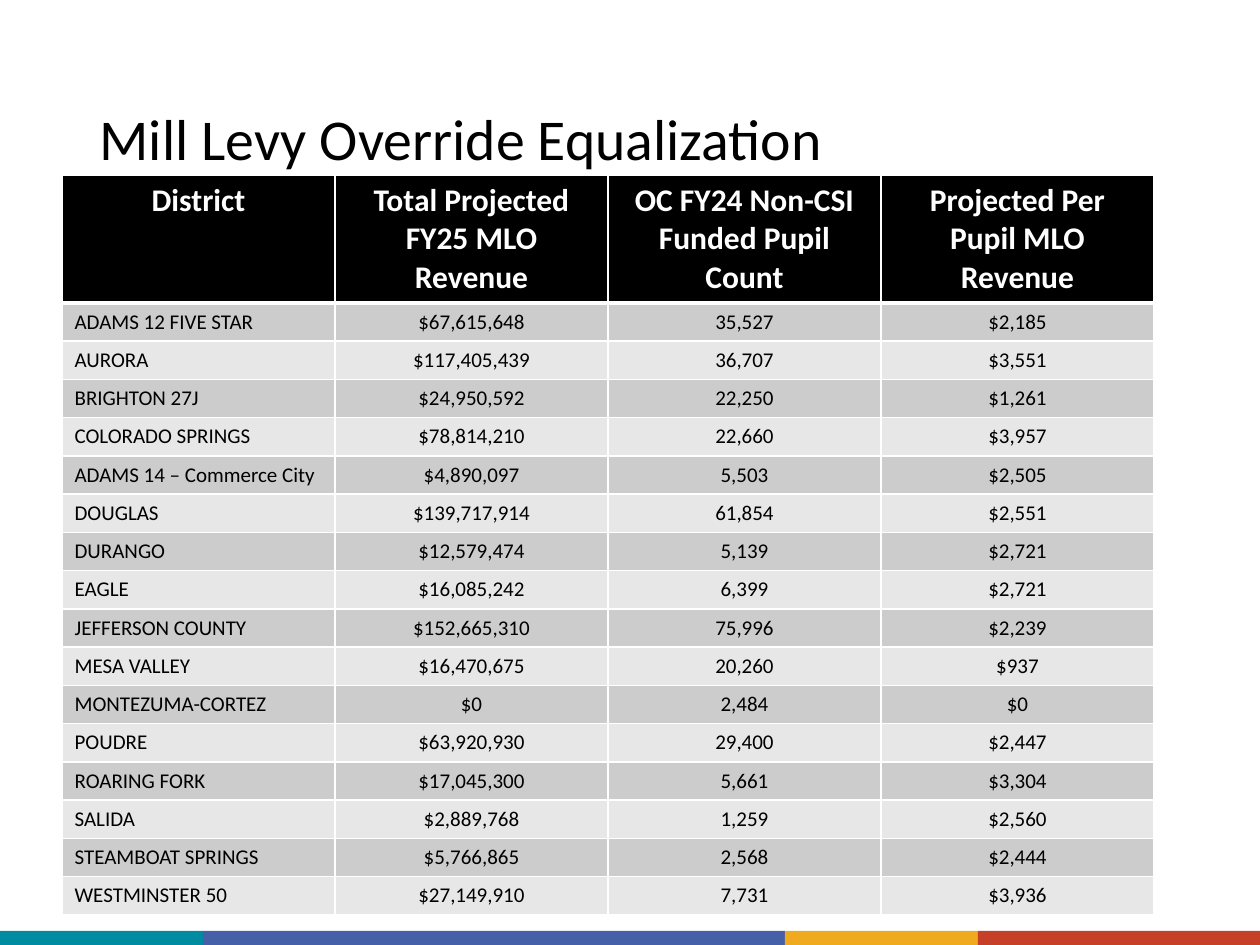
from lxml import etree
from pptx import Presentation
from pptx import util as u
from pptx.dml.color import RGBColor
from pptx.enum import shapes, text
from pptx.oxml import ns

PX = u.Inches(1) // 126
FONT = "Calibri"
BLACK = RGBColor(0x00, 0x00, 0x00)
WHITE = RGBColor(0xFF, 0xFF, 0xFF)
BAND_DARK = RGBColor(0xCC, 0xCC, 0xCC)
BAND_LIGHT = RGBColor(0xE7, 0xE7, 0xE7)
TEAL = RGBColor(0x00, 0x8C, 0xA0)
BLUE = RGBColor(0x45, 0x5F, 0xA9)
GOLD = RGBColor(0xEF, 0xAA, 0x1F)
RED = RGBColor(0xC6, 0x3F, 0x28)

TITLE = "Mill Levy Override Equalization"
HEADERS = ("District", "Total Projected FY25 MLO Revenue",
           "OC FY24 Non-CSI Funded Pupil Count", "Projected Per Pupil MLO Revenue")
DISTRICTS = [
    ("ADAMS 12 FIVE STAR", 67615648, 35527, 2185),
    ("AURORA", 117405439, 36707, 3551),
    ("BRIGHTON 27J", 24950592, 22250, 1261),
    ("COLORADO SPRINGS", 78814210, 22660, 3957),
    ("ADAMS 14 – Commerce City", 4890097, 5503, 2505),
    ("DOUGLAS", 139717914, 61854, 2551),
    ("DURANGO", 12579474, 5139, 2721),
    ("EAGLE", 16085242, 6399, 2721),
    ("JEFFERSON COUNTY", 152665310, 75996, 2239),
    ("MESA VALLEY", 16470675, 20260, 937),
    ("MONTEZUMA-CORTEZ", 0, 2484, 0),
    ("POUDRE", 63920930, 29400, 2447),
    ("ROARING FORK", 17045300, 5661, 3304),
    ("SALIDA", 2889768, 1259, 2560),
    ("STEAMBOAT SPRINGS", 5766865, 2568, 2444),
    ("WESTMINSTER 50", 27149910, 7731, 3936),
]


def emu(*lengths):
    return [n * PX for n in lengths]


def format_text(p, size, color, bold=False, align=text.PP_ALIGN.LEFT):
    p.alignment = align
    for r in p.runs:
        f = r.font
        f.name, f.size, f.bold = FONT, u.Pt(size), bold
        f.color.rgb = color


def add_footer_band(s, x, y, w, h):
    """Coloured segments laid end to end across the box."""
    segments = ((203, TEAL), (582, BLUE), (193, GOLD), (w - 978, RED))
    for width, color in segments:
        sp = s.shapes.add_shape(shapes.MSO_SHAPE.RECTANGLE, *emu(x, y, width, h))
        sp.shadow.inherit = False
        sp.fill.solid()
        sp.fill.fore_color.rgb = color
        sp.line.fill.background()
        x += width


def add_title(s, x, y, w, h):
    sp = s.shapes.title
    sp.left, sp.top, sp.width, sp.height = emu(x, y, w, h)
    tf = sp.text_frame
    tf.text = TITLE
    tf.word_wrap = True
    tf.auto_size = text.MSO_AUTO_SIZE.NONE
    tf.vertical_anchor = text.MSO_ANCHOR.MIDDLE
    p = tf.paragraphs[0]
    p.line_spacing = 0.9
    format_text(p, 33, BLACK)


def set_borders(cell, **widths):
    """White cell borders; widths are points by side, 1 by default."""
    tc_pr = cell._tc.get_or_add_tcPr()
    for side in "LRTB":
        ln = etree.SubElement(tc_pr, ns.qn("a:ln" + side),
                              w=str(u.Pt(widths.get(side, 1))))
        fill = etree.SubElement(ln, ns.qn("a:solidFill"))
        etree.SubElement(fill, ns.qn("a:srgbClr"), val=str(WHITE))


def add_district_table(s, x, y, w, header_h, row_h):
    rows = [HEADERS] + [(name, f"${revenue:,}", f"{pupils:,}", f"${per_pupil:,}")
                        for name, revenue, pupils, per_pupil in DISTRICTS]
    h = header_h + row_h * len(DISTRICTS)
    table = s.shapes.add_table(len(rows), len(HEADERS), *emu(x, y, w, h)).table
    for i, values in enumerate(rows):
        header = i == 0
        table.rows[i].height = (header_h if header else row_h) * PX
        band = BLACK if header else BAND_DARK if i % 2 else BAND_LIGHT
        for j, value in enumerate(values):
            cell = table.cell(i, j)
            # The rule under the header is thicker than the others
            set_borders(cell, T=3 if i == 1 else 1, B=3 if header else 1)
            cell.fill.solid()
            cell.fill.fore_color.rgb = band
            cell.text_frame.text = value
            centred = header or j > 0
            format_text(cell.text_frame.paragraphs[0], 18 if header else 12,
                        WHITE if header else BLACK, header,
                        text.PP_ALIGN.CENTER if centred else text.PP_ALIGN.LEFT)


def main():
    prs = Presentation()
    prs.slide_width, prs.slide_height = emu(1260, 945)
    s = prs.slides.add_slide(prs.slide_layouts.get_by_name("Title Only"))
    add_footer_band(s, 0, 931, 1260, 14)
    add_title(s, 87, 50, 1086, 183)
    add_district_table(s, 62, 175, 1092, 126, 38)
    prs.save("out.pptx")


if __name__ == "__main__":
    main()
